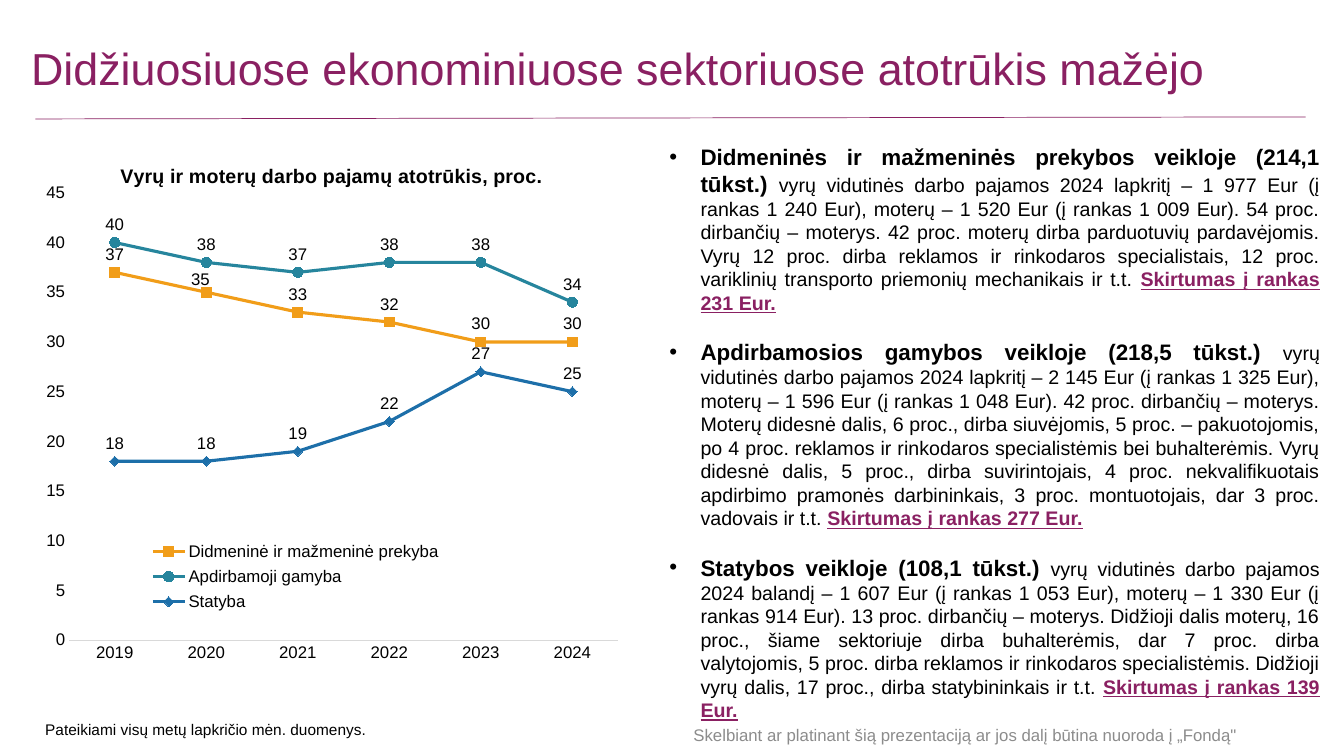
from dataclasses import dataclass, field
from typing import Any, NamedTuple

from lxml.etree import SubElement
from pptx import Presentation
from pptx.chart.data import CategoryChartData as Data
from pptx.dml.color import RGBColor
from pptx.enum.chart import XL_CHART_TYPE as Kind
from pptx.enum.chart import XL_LABEL_POSITION as Spot
from pptx.enum.chart import XL_LEGEND_POSITION as Side
from pptx.enum.chart import XL_MARKER_STYLE as Mark
from pptx.enum.chart import XL_TICK_MARK as Tick
from pptx.enum.shapes import MSO_CONNECTOR as Link
from pptx.enum.text import MSO_ANCHOR as Anchor
from pptx.enum.text import PP_ALIGN as Align
from pptx.oxml.ns import qn
from pptx.util import Emu, Pt

SCALE = 9144
FONT = "Arial"
PLUM, BLACK, GREY, RULE = "8A2062", "000000", "8C8C8C", "D9D9D9"


class Run(NamedTuple):
    text: str
    size: int = 14
    color: str = BLACK
    bold: bool = False
    under: bool = False


@dataclass
class Box:
    rect: tuple[int, int, int, int]
    paras: list[list[Run]]
    anchor: Any = Anchor.TOP
    bullet: bool = False
    style: dict[str, Any] = field(default_factory=dict)


class Trend(NamedTuple):
    name: str
    vals: tuple[int, ...]
    color: str
    mark: Any


class Sector(NamedTuple):
    head: str
    body: str
    gap: str


SECTORS = [
    Sector(
        "Didmeninės ir mažmeninės prekybos veikloje (214,1 tūkst.) ",
        "vyrų vidutinės darbo pajamos 2024 lapkritį – 1 977 Eur (į rankas 1 240 Eur), "
        "moterų – 1 520 Eur (į rankas 1 009 Eur). 54 proc. dirbančių – moterys. "
        "42 proc. moterų dirba parduotuvių pardavėjomis. Vyrų 12 proc. dirba reklamos "
        "ir rinkodaros specialistais, 12 proc. variklinių transporto priemonių "
        "mechanikais ir t.t. ",
        "Skirtumas į rankas 231 Eur.",
    ),
    Sector(
        "Apdirbamosios gamybos veikloje (218,5 tūkst.) ",
        "vyrų vidutinės darbo pajamos 2024 lapkritį – 2 145 Eur (į rankas 1 325 Eur), "
        "moterų – 1 596 Eur (į rankas 1 048 Eur). 42 proc. dirbančių – moterys. "
        "Moterų didesnė dalis, 6 proc., dirba siuvėjomis, 5 proc. – pakuotojomis, "
        "po 4 proc. reklamos ir rinkodaros specialistėmis bei buhalterėmis. Vyrų "
        "didesnė dalis, 5 proc., dirba suvirintojais, 4 proc. nekvalifikuotais "
        "apdirbimo pramonės darbininkais, 3 proc. montuotojais, dar 3 proc. "
        "vadovais ir t.t. ",
        "Skirtumas į rankas 277 Eur.",
    ),
    Sector(
        "Statybos veikloje (108,1 tūkst.) ",
        "vyrų vidutinės darbo pajamos 2024 balandį – 1 607 Eur (į rankas 1 053 Eur), "
        "moterų – 1 330 Eur (į rankas 914 Eur). 13 proc. dirbančių – moterys. "
        "Didžioji dalis moterų, 16 proc., šiame sektoriuje dirba buhalterėmis, "
        "dar 7 proc. dirba valytojomis, 5 proc. dirba reklamos ir rinkodaros "
        "specialistėmis. Didžioji vyrų dalis, 17 proc., dirba statybininkais ir t.t. ",
        "Skirtumas į rankas 139 Eur.",
    ),
]

BOXES = [
    Box((654, 709, 607, 40),
        [[Run("Skelbiant ar platinant šią prezentaciją ar jos dalį būtina nuoroda į „Fondą\"",
              12, GREY)]],
        Anchor.MIDDLE, style={"alignment": Align.CENTER}),
    Box((21, 26, 1278, 89),
        [[Run("Didžiuosiuose ekonominiuose sektoriuose atotrūkis mažėjo", 32, PLUM)]],
        Anchor.MIDDLE, style={"line_spacing": 0.9}),
    Box((654, 137, 665, 636),
        [[Run(s.head, 16, bold=True), Run(s.body), Run(s.gap, 14, PLUM, True, True)]
         for s in SECTORS],
        bullet=True, style={"alignment": Align.JUSTIFY, "line_spacing": 1.0}),
    Box((35, 709, 636, 29), [[Run("Pateikiami visų metų lapkričio mėn. duomenys.", 11)]]),
]

TRENDS = [
    Trend("Didmeninė ir mažmeninė prekyba", (37, 35, 33, 32, 30, 30), "F19D19", Mark.SQUARE),
    Trend("Apdirbamoji gamyba", (40, 38, 37, 38, 38, 34), "26859D", Mark.CIRCLE),
    Trend("Statyba", (18, 18, 19, 22, 27, 25), "1D6FA9", Mark.DIAMOND),
]


def px(n: int) -> Emu:
    return Emu(n * SCALE)


def rgb(code: str) -> RGBColor:
    return RGBColor.from_string(code)


def put(obj: Any, vals: dict[str, Any]) -> None:
    for key, val in vals.items():
        setattr(obj, key, val)


def ink(font: Any, size: int, color: str = BLACK, bold: bool = False,
        under: bool = False) -> None:
    put(font, {"name": FONT, "size": Pt(size), "bold": bold, "underline": under})
    font.color.rgb = rgb(color)


def draw_box(slide: Any, box: Box) -> None:
    frame = slide.shapes.add_textbox(*map(px, box.rect)).text_frame
    put(frame, {"word_wrap": True, "vertical_anchor": box.anchor})
    for i, runs in enumerate(box.paras):
        para = frame.add_paragraph() if i else frame.paragraphs[0]
        put(para, box.style | {"space_before": Pt(17 if i else 0)})
        if box.bullet:
            prop = para._p.get_or_add_pPr()
            prop.set("marL", str(px(31)))
            prop.set("indent", str(px(-31)))
            SubElement(prop, qn("a:buFont")).set("typeface", FONT)
            SubElement(prop, qn("a:buChar")).set("char", "•")
        for text, *look in runs:
            run = para.add_run()
            run.text = text
            ink(run.font, *look)


def place(node: Any, **vals: Any) -> None:
    """Give a chart part a manual layout in fractions of the chart."""
    old = node.find(qn("c:layout"))
    if old is not None:
        node.remove(old)
    lay = SubElement(node, qn("c:layout"))
    man = SubElement(lay, qn("c:manualLayout"))
    for key, val in vals.items():
        SubElement(man, qn(f"c:{key}")).set("val", str(val))
    prior = [k for k in node if k.tag in map(qn, ("c:idx", "c:legendPos", "c:tx"))]
    node.insert(node.index(prior[-1]) + 1 if prior else 0, lay)


def draw_trend(line: Any, trend: Trend) -> None:
    line.smooth = False
    put(line.format.line, {"width": Pt(2.25)})
    line.format.line.color.rgb = rgb(trend.color)
    put(line.marker, {"style": trend.mark, "size": 7})
    for part in (line.marker.format.fill, line.marker.format.line.fill):
        part.solid()
        part.fore_color.rgb = rgb(trend.color)
    tags = line.data_labels
    put(tags, {"show_value": True, "position": Spot.ABOVE,
               "number_format": "#,##0", "number_format_is_linked": False})
    ink(tags.font, 12)


def draw_chart(slide: Any) -> None:
    data = Data(number_format="0")
    data.categories = [str(y) for y in range(2019, 2025)]
    for trend in TRENDS:
        data.add_series(trend.name, trend.vals)
    chart = slide.shapes.add_chart(
        Kind.LINE_MARKERS, *map(px, (33, 142, 592, 548)), data).chart
    ink(chart.font, 10)
    put(chart, {"has_title": True, "has_legend": True})
    frame = chart.chart_title.text_frame
    frame.text = "Vyrų ir moterų darbo pajamų atotrūkis, proc."
    ink(frame.paragraphs[0].runs[0].font, 14, bold=True)
    place(chart.chart_title._element, xMode="edge", yMode="edge", x=0.14, y=0.03)
    put(chart.legend, {"position": Side.BOTTOM, "include_in_layout": False})
    ink(chart.legend.font, 12)
    place(chart.legend._element, xMode="edge", yMode="edge", x=0.18, y=0.71, w=0.52, h=0.15)
    for axis in (chart.category_axis, chart.value_axis):
        put(axis, {"major_tick_mark": Tick.NONE, "minor_tick_mark": Tick.NONE,
                   "has_major_gridlines": False})
        ink(axis.tick_labels.font, 12)
    base = chart.category_axis.format.line
    base.width = Pt(0.75)
    base.color.rgb = rgb(RULE)
    put(chart.value_axis, {"minimum_scale": 0, "maximum_scale": 45, "major_unit": 5})
    put(chart.value_axis.tick_labels, {"number_format": "0", "number_format_is_linked": False})
    chart.value_axis.format.line.fill.background()
    plot = chart.plots[0]
    plot.vary_by_categories = False
    place(chart._chartSpace.chart.plotArea, layoutTarget="inner", xMode="edge",
          yMode="edge", x=0.06, y=0.09, w=0.92, h=0.81)
    for line, trend in zip(plot.series, TRENDS):
        draw_trend(line, trend)
    tag = plot.series[0].points[1].data_label
    ink(tag.font, 12)
    tag.position = Spot.ABOVE
    place(plot.series[0].data_labels._element.find(qn("c:dLbl")), x=-0.01, y=0.01)


def draw_rule(slide: Any) -> None:
    rule = slide.shapes.add_connector(Link.STRAIGHT, *map(px, (35, 118, 1295, 116)))
    rule.line.width = Pt(0.5)
    rule.line.color.rgb = rgb(PLUM)
    SubElement(rule._element.spPr, qn("a:effectLst"))


def main() -> None:
    deck = Presentation()
    put(deck, {"slide_width": px(1333), "slide_height": px(750)})
    slide = deck.slides.add_slide(deck.slide_layouts[6])
    for box in BOXES:
        draw_box(slide, box)
    draw_rule(slide)
    draw_chart(slide)
    deck.save("out.pptx")


if __name__ == "__main__":
    main()
